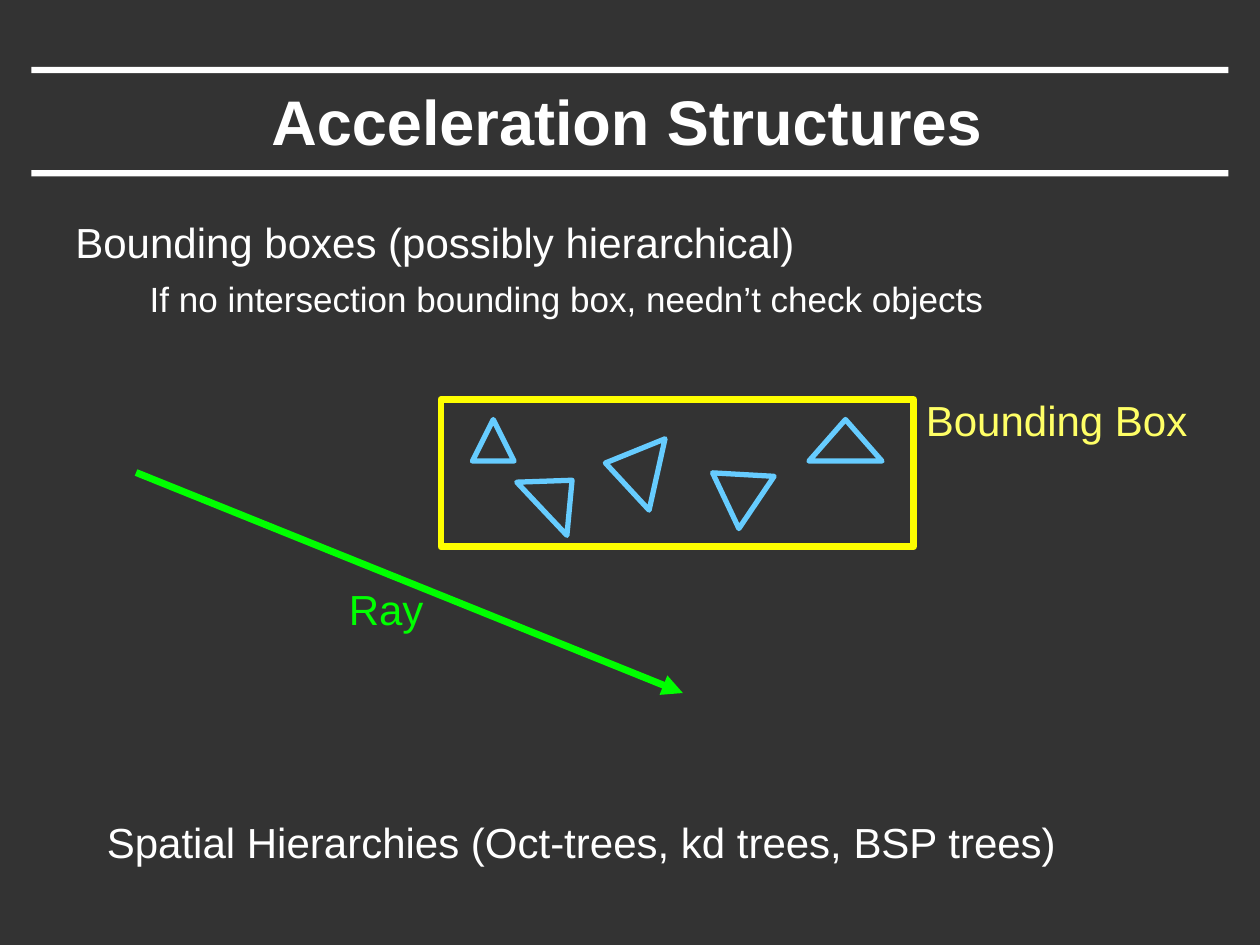
"""Build a slide on acceleration structures for ray tracing."""
import pptx
import pptx.util
import pptx.dml.color
import pptx.enum.shapes
import pptx.enum.text
import pptx.oxml

Inches, Pt = pptx.util.Inches, pptx.util.Pt
KIND = pptx.enum.shapes.MSO_SHAPE
ALIGN = pptx.enum.text.PP_ALIGN
ANCHOR = pptx.enum.text.MSO_ANCHOR

HUES = {"back": "333333", "white": "FFFFFF", "box": "FFFF00",
        "label": "FFFF66", "tri": "66CCFF", "ray": "00FF00"}
RULES = [1.35, 0.53]
BOX = (3.5, 3.17, 3.75, 1.17)
TRIS = [
    ((3.75, 3.33, 0.33, 0.33), 0),
    ((4.13, 3.76, 0.58, 0.33), 46.7),
    ((4.72, 3.51, 0.58, 0.42), 282.6),
    ((5.58, 3.66, 0.5, 0.42), 304),
    ((6.42, 3.33, 0.58, 0.33), 0),
]
RAY = (1.08, 3.75, 5.42, 5.5)
HEAD = {"size": 36, "bold": True}
BODY = {"size": 24}
SUB = {"size": 20}
TEXTS = [
    ((0.74, 0.58, 8.47, 0.75), "white", True,
     [("Acceleration Structures", HEAD, {"alignment": ALIGN.CENTER})]),
    ((0.5, 1.67, 9, 5.5), "white", True,
     [("Bounding boxes (possibly hierarchical)", BODY, {}),
      ("If no intersection bounding box, needn’t check objects", SUB,
       {"space_before": Pt(6)})]),
    ((7.25, 3.08, 2.3, 0.5), "label", False, [("Bounding Box", BODY, {})]),
    ((2.67, 4.58, 0.8, 0.5), "ray", False, [("Ray", BODY, {})]),
    ((0.75, 6.43, 8.36, 0.5), "white", True,
     [("Spatial Hierarchies (Oct-trees, kd trees, BSP trees)", BODY, {})]),
]
NS = 'xmlns:a="http://schemas.openxmlformats.org/drawingml/2006/main"'


def hue(name):
    return pptx.dml.color.RGBColor.from_string(HUES[name])


def put(obj, vals):
    for key, val in vals.items():
        setattr(obj, key, val)


def add_shape(slide, kind, at, fill=None, line=None, width=0, turn=0):
    shape = slide.shapes.add_shape(kind, *map(Inches, at))
    shape.shadow.inherit = False
    shape.rotation = turn
    for part, name in ((shape.fill, fill), (shape.line.fill, line)):
        if name:
            part.solid()
            part.fore_color.rgb = hue(name)
        else:
            part.background()
    if line:
        shape.line.width = Pt(width)


def add_text(slide, at, name, wrap, paras):
    frame = slide.shapes.add_textbox(*map(Inches, at)).text_frame
    title = paras[0][1] is HEAD
    put(frame, {"word_wrap": wrap,
                "vertical_anchor": ANCHOR.MIDDLE if title else ANCHOR.TOP})
    for num, (text, font, form) in enumerate(paras):
        para = frame.add_paragraph() if num else frame.paragraphs[0]
        put(para, form)
        if font is SUB:
            para._p.get_or_add_pPr().set("marL", str(Inches(0.59)))
        run = para.add_run()
        run.text = text
        put(run.font, {**font, "size": Pt(font["size"]), "name": "Arial"})
        run.font.color.rgb = hue(name)


def add_ray(slide):
    ray = slide.shapes.add_connector(
        pptx.enum.shapes.MSO_CONNECTOR.STRAIGHT, *map(Inches, RAY))
    ray.line.color.rgb = hue("ray")
    ray.line.width = Pt(4)
    tail = pptx.oxml.parse_xml(f'<a:tailEnd {NS} type="triangle"/>')
    ray.line._get_or_add_ln().append(tail)
    ray._element.spPr.append(pptx.oxml.parse_xml(f"<a:effectLst {NS}/>"))


def main():
    deck = pptx.Presentation()
    put(deck, {"slide_width": Inches(10), "slide_height": Inches(7.5)})
    slide = deck.slides.add_slide(deck.slide_layouts[6])
    slide.background.fill.solid()
    slide.background.fill.fore_color.rgb = hue("back")
    for top in RULES:
        add_shape(slide, KIND.RECTANGLE, (0.25, top, 9.5, 0.05), fill="white")
    add_shape(slide, KIND.RECTANGLE, BOX, line="box", width=4)
    for at, turn in TRIS:
        add_shape(slide, KIND.ISOSCELES_TRIANGLE, at, line="tri", width=3,
                  turn=turn)
    add_ray(slide)
    for item in TEXTS:
        add_text(slide, *item)
    deck.save("out.pptx")


if __name__ == "__main__":
    main()
